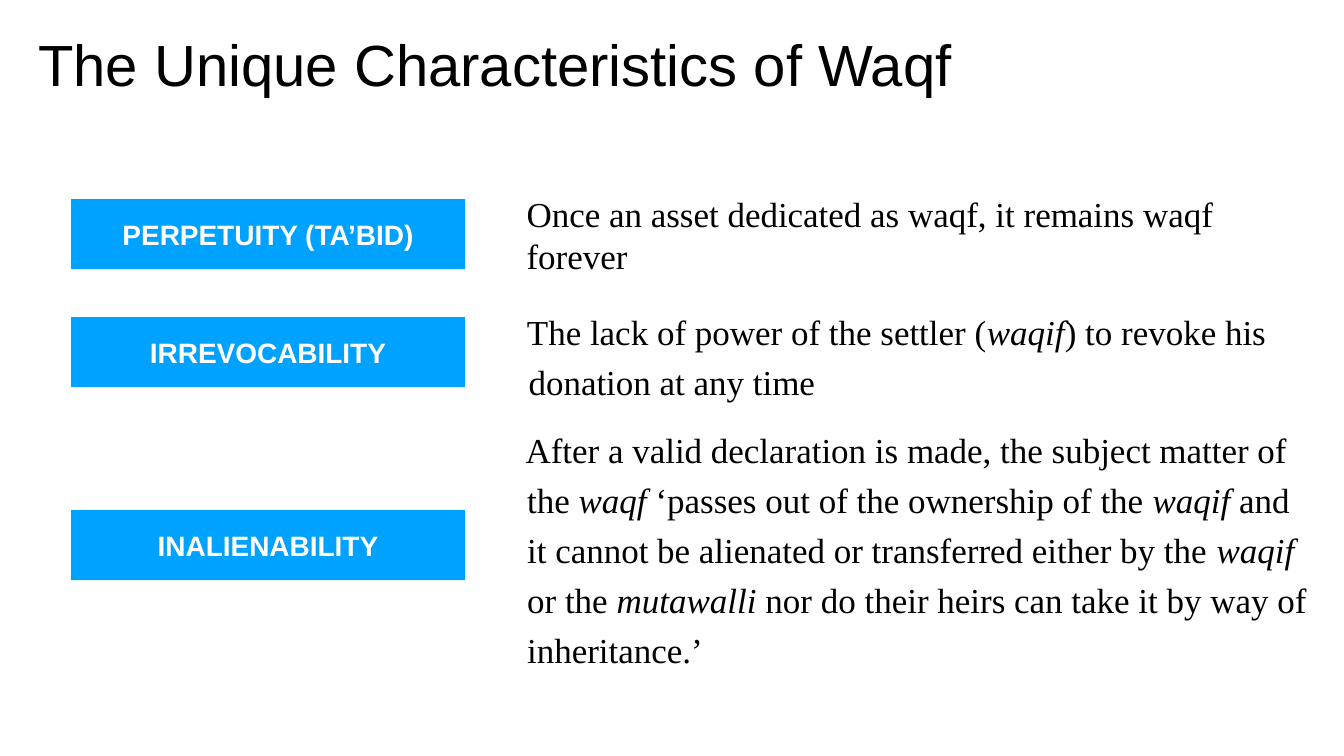
from pptx import Presentation
from pptx.dml.color import RGBColor
from pptx.enum.shapes import MSO_SHAPE
from pptx.enum.text import MSO_ANCHOR, PP_ALIGN
from pptx.util import Cm, Pt

RECT = MSO_SHAPE.RECTANGLE
MIDDLE = MSO_ANCHOR.MIDDLE
CENTER = PP_ALIGN.CENTER

COLORS = {"text": "000000", "label": "00A2FF", "label_text": "FFFFFF"}
HEADING_FONT = "Arial"
BODY_FONT = "Times New Roman"

ROW_LEFT = 3.58
LABEL_W, LABEL_H = 19.86, 3.53
INSET = 0.2
HANGING = -0.08

# Row top and height, label, then the description's offset from the row's left,
# width, left margin, line spacing, space before and (text, italic) runs
ROWS = [
    (9.45, 4.7, "PERPETUITY (TA’BID)", 22.76, 39.45, 0, 1, 0, [
        ("Once an asset dedicated as waqf, it remains waqf forever", False),
    ]),
    (15.19, 5.11, "IRREVOCABILITY", 21.62, 40.74, 1.24, 1.19, 0, [
        ("The lack of power of the settler (", False),
        ("waqif", True),
        (") to revoke his donation at any time", False),
    ]),
    (21.08, 12.78, "INALIENABILITY", 22.1, 40.74, 0.69, 1.19, 0, [
        ("After a valid declaration is made, the subject matter of the ", False),
        ("waqf ", True),
        ("‘passes out of the ownership of the ", False),
        ("waqif ", True),
        ("and it cannot be alienated or transferred either by the ", False),
        ("waqif ", True),
        ("or the ", False),
        ("mutawalli ", True),
        ("nor do their heirs can take it by way of inheritance.’", False),
    ]),
]


def rgb(name):
    return RGBColor.from_string(COLORS[name])


def set_frame(sp):
    """Give the shape a wrapped, middle-anchored frame; return its paragraph."""
    tf = sp.text_frame
    tf.word_wrap = True
    tf.vertical_anchor = MIDDLE
    tf.margin_left = tf.margin_right = Cm(INSET)
    tf.margin_top = tf.margin_bottom = Cm(INSET)
    return tf.paragraphs[0]


def add_run(p, text, font, size, color, bold=False, italic=False):
    r = p.add_run()
    r.text = text
    r.font.name = font
    r.font.size = Pt(size)
    r.font.bold = bold
    r.font.italic = italic
    r.font.color.rgb = rgb(color)


def add_title(s, left, top, width, height, text):
    sp = s.shapes.add_textbox(Cm(left), Cm(top), Cm(width), Cm(height))
    add_run(set_frame(sp), text, HEADING_FONT, 82.9, "text")


def add_label(s, left, top, width, height, text):
    sp = s.shapes.add_shape(RECT, Cm(left), Cm(top), Cm(width), Cm(height))
    sp.shadow.inherit = False
    sp.fill.solid()
    sp.fill.fore_color.rgb = rgb("label")
    sp.line.fill.background()
    p = set_frame(sp)
    p.alignment = CENTER
    add_run(p, text, HEADING_FONT, 40, "label_text", bold=True)


def add_description(s, left, top, width, height, margin, spacing, before, runs):
    sp = s.shapes.add_textbox(Cm(left), Cm(top), Cm(width), Cm(height))
    p = set_frame(sp)
    p.line_spacing = spacing
    p.space_before = Pt(before)
    if margin:
        pPr = p._p.get_or_add_pPr()
        pPr.set("marL", str(Cm(margin)))
        pPr.set("indent", str(Cm(HANGING)))
    for text, italic in runs:
        add_run(p, text, BODY_FONT, 50, "text", italic=italic)


def add_row(s, left, top, height, label, offset, width, *description):
    """Place a label centred vertically beside its description."""
    add_label(s, left, top + (height - LABEL_H) / 2, LABEL_W, LABEL_H, label)
    add_description(s, left + offset, top, width, height, *description)


def main():
    prs = Presentation()
    prs.slide_width, prs.slide_height = Cm(67.74), Cm(38.1)
    s = prs.slides.add_slide(prs.slide_layouts[6])
    add_title(s, 1.73, 1.24, 60.6, 3.89, "The Unique Characteristics of Waqf")
    for row in ROWS:
        add_row(s, ROW_LEFT, *row)
    prs.save("out.pptx")


if __name__ == "__main__":
    main()
